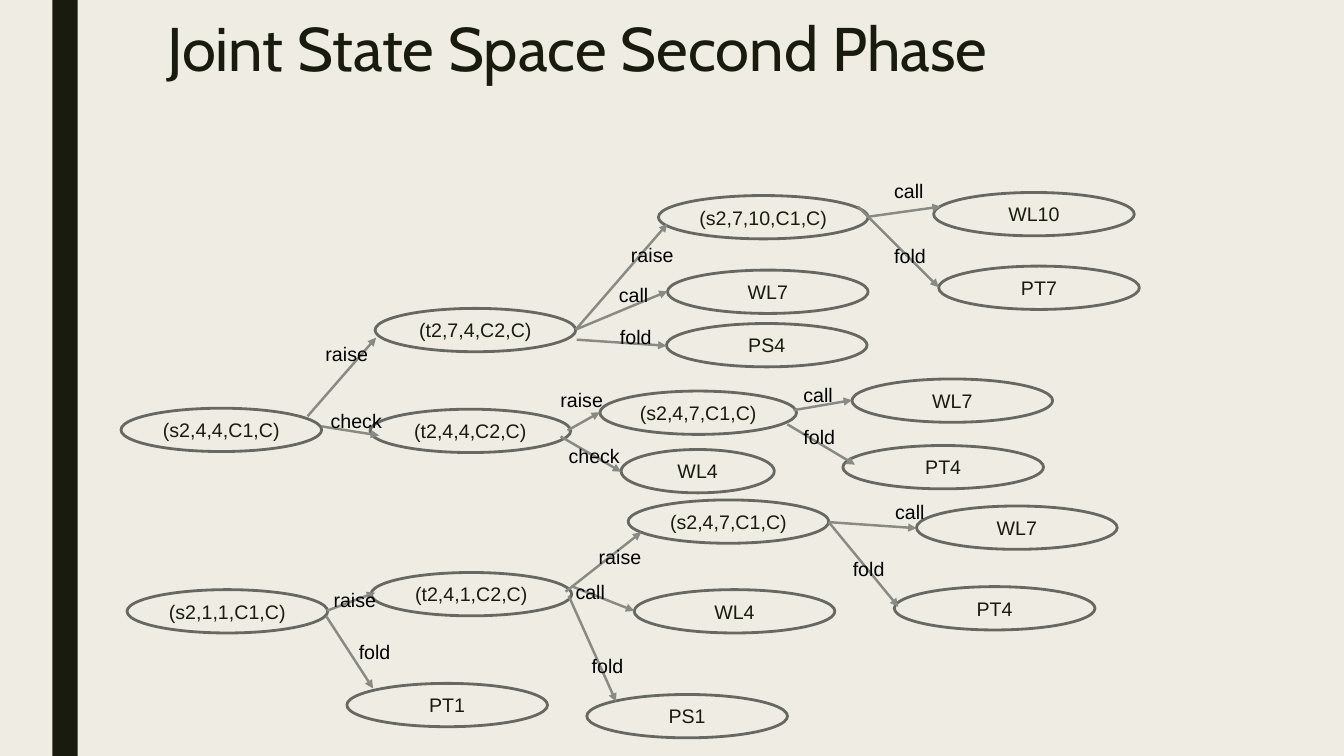
from lxml import etree
from pptx import Presentation
from pptx.dml.color import RGBColor
from pptx.enum import shapes, text
from pptx.oxml import ns
from pptx.util import Inches, Pt

INK = RGBColor(0x19, 0x1B, 0x0E)
PAPER = RGBColor(0xEF, 0xED, 0xE3)
OUTLINE = RGBColor(0x68, 0x68, 0x63)
ARROW = RGBColor(0x89, 0x8A, 0x83)
BLACK = RGBColor(0, 0, 0)

STATE_WIDTH, STATE_HEIGHT = 1.99, 0.43
LABEL_WIDTHS = {"check": 0.71, "raise": 0.63, "call": 0.5, "fold": 0.52}
LABEL_HEIGHT = 0.34

# Each state: text, left, top and, where it differs, width.
STATES = [
    ("(s2,4,4,C1,C)", 1.2, 4.05),
    ("(t2,7,4,C2,C)", 3.72, 3.06),
    ("(s2,7,10,C1,C)", 6.53, 1.94, 2.08),
    ("WL10", 9.26, 1.91),
    ("PT7", 9.31, 2.64),
    ("WL7", 6.62, 2.68),
    ("PS4", 6.61, 3.21),
    ("(t2,4,4,C2,C)", 3.67, 4.06),
    ("(s2,4,7,C1,C)", 5.95, 3.88, 1.95),
    ("WL7", 8.45, 3.76),
    ("PT4", 8.36, 4.42),
    ("WL4", 6.16, 4.46, 1.52),
    ("(s2,1,1,C1,C)", 1.26, 5.85),
    ("(t2,4,1,C2,C)", 3.68, 5.68),
    ("(s2,4,7,C1,C)", 6.23, 4.96),
    ("WL7", 9.09, 5.02),
    ("PT4", 8.87, 5.82),
    ("WL4", 6.29, 5.85),
    ("PS1", 5.82, 6.89),
    ("PT1", 3.44, 6.78),
]

# Each move: action, label corner, arrow start, arrow end.
MOVES = [
    ("raise", (3.13, 3.34), (3.05, 4.13), (3.73, 3.35)),
    ("check", (3.18, 4.01), (3.19, 4.23), (3.76, 4.32)),
    ("raise", (6.16, 2.36), (5.71, 3.27), (6.62, 2.22)),
    ("call", (6.04, 2.76), (5.71, 3.27), (6.62, 2.89)),
    ("fold", (6.05, 3.17), (5.72, 3.37), (6.61, 3.43)),
    ("call", (8.77, 1.73), (8.61, 2.15), (9.33, 2.05)),
    ("fold", (8.77, 2.37), (8.51, 2.05), (9.31, 2.85)),
    ("raise", (5.46, 3.8), (5.63, 4.27), (5.95, 4.09)),
    ("check", (5.54, 4.35), (5.56, 4.33), (6.16, 4.68)),
    ("call", (7.87, 3.75), (7.87, 4.07), (8.45, 3.97)),
    ("fold", (7.87, 4.17), (7.81, 4.21), (8.48, 4.61)),
    ("raise", (3.21, 5.78), (3.24, 6.06), (3.72, 5.88)),
    ("fold", (3.46, 6.3), (3.24, 6.12), (3.7, 6.83)),
    ("raise", (5.84, 5.36), (5.61, 5.87), (6.36, 5.28)),
    ("call", (5.61, 5.7), (5.68, 5.82), (6.29, 6.06)),
    ("fold", (5.77, 6.44), (5.64, 5.91), (6.11, 6.96)),
    ("call", (8.78, 4.91), (8.22, 5.18), (9.09, 5.24)),
    ("fold", (8.36, 5.48), (8.22, 5.18), (8.91, 6.02)),
]


def write(box, words, size, font, color):
    """Put one line of formatted text in a box and return its paragraph."""
    box.text_frame.text = words
    para = box.text_frame.paragraphs[0]
    span = para.runs[0]
    span.font.size = Pt(size)
    span.font.name = font
    span.font.color.rgb = color
    return para


def add_side_bar(page):
    """Draw the dark bar at the left of the page."""
    bar = page.shapes.add_shape(shapes.MSO_SHAPE.RECTANGLE, Inches(0.52), 0,
                                Inches(0.25), Inches(7.5))
    bar.shadow.inherit = False
    bar.fill.solid()
    bar.fill.fore_color.rgb = INK
    bar.line.fill.background()


def add_title(page, words):
    """Write the page title."""
    box = page.shapes.add_textbox(Inches(1.56), Inches(0.14), Inches(10.5), Inches(1.62))
    box.text_frame.word_wrap = True
    para = write(box, words, 44, "Cabin", INK)
    para.line_spacing = 0.89


def add_state(page, words, left, top, width=STATE_WIDTH):
    """Draw one game state as an outlined ellipse."""
    state = page.shapes.add_shape(shapes.MSO_SHAPE.OVAL, Inches(left), Inches(top),
                                  Inches(width), Inches(STATE_HEIGHT))
    state.shadow.inherit = False
    state.fill.background()
    state.line.color.rgb = OUTLINE
    state.line.width = Pt(2)
    para = write(state, words, 14, "Arial", INK)
    para.alignment = text.PP_ALIGN.CENTER
    state.text_frame.vertical_anchor = text.MSO_ANCHOR.MIDDLE
    state.text_frame.word_wrap = False


def add_arrow(page, start, end):
    """Draw a straight arrow between two points."""
    arrow = page.shapes.add_connector(shapes.MSO_CONNECTOR.STRAIGHT,
                                      *map(Inches, start + end))
    arrow.line.color.rgb = ARROW
    arrow.line.width = Pt(1.75)
    etree.SubElement(arrow.line._get_or_add_ln(), ns.qn("a:tailEnd"), type="triangle")
    etree.SubElement(arrow._element.spPr, ns.qn("a:effectLst"))


def add_label(page, action, corner):
    """Write the action that an arrow stands for."""
    left, top = corner
    box = page.shapes.add_textbox(Inches(left), Inches(top),
                                  Inches(LABEL_WIDTHS[action]), Inches(LABEL_HEIGHT))
    box.text_frame.word_wrap = False
    box.text_frame.auto_size = text.MSO_AUTO_SIZE.SHAPE_TO_FIT_TEXT
    write(box, action, 14, "Arial", BLACK)


def main():
    """Build the slide and save it."""
    deck = Presentation()
    deck.slide_width, deck.slide_height = Inches(13.33), Inches(7.5)
    page = deck.slides.add_slide(deck.slide_layouts[6])
    page.background.fill.solid()
    page.background.fill.fore_color.rgb = PAPER
    add_side_bar(page)
    add_title(page, "Joint State Space Second Phase")
    for state in STATES:
        add_state(page, *state)
    for action, corner, start, end in MOVES:
        add_arrow(page, start, end)
        add_label(page, action, corner)
    deck.save("out.pptx")


if __name__ == "__main__":
    main()
